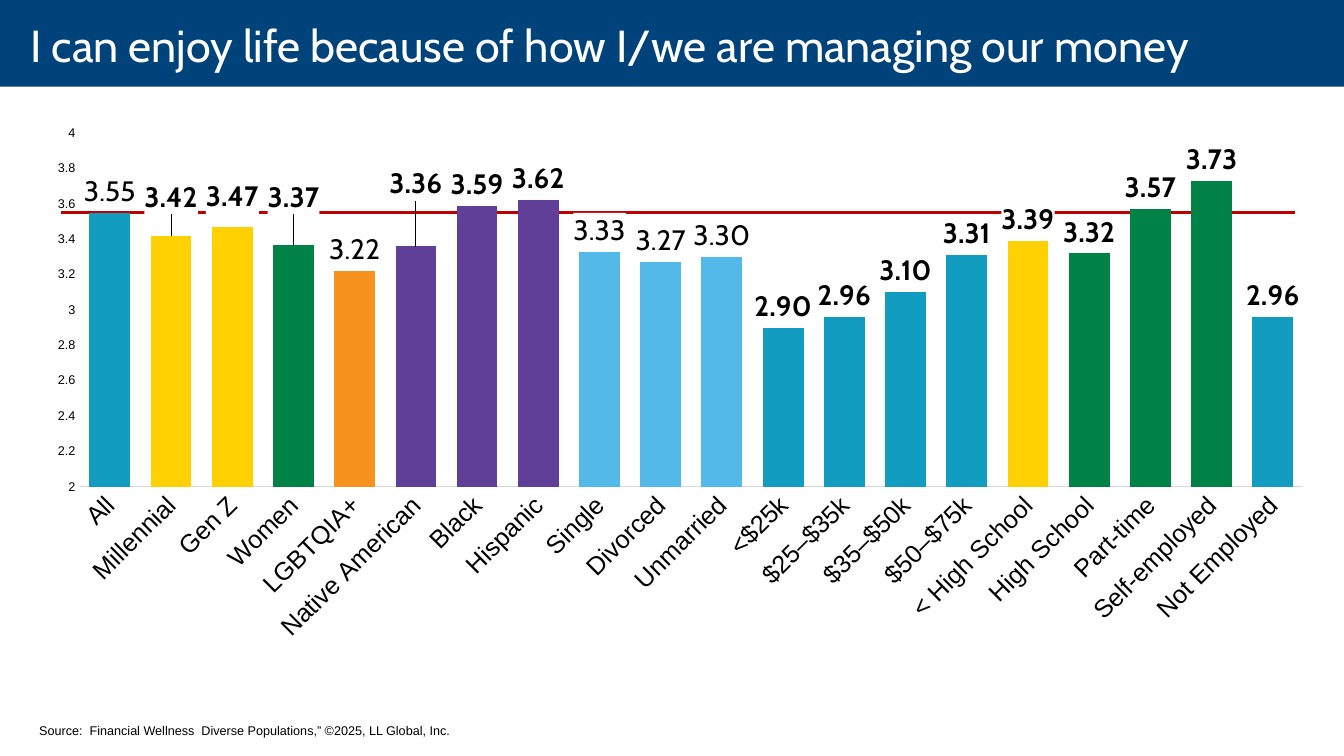
from lxml import etree
from pptx import Presentation
from pptx import util as u
from pptx.chart import data as chart_data
from pptx.dml.color import RGBColor
from pptx.enum import chart as chart_enum
from pptx.enum import shapes, text
from pptx.oxml import parse_xml
from pptx.oxml.ns import nsdecls, qn

NAVY = RGBColor(0x00, 0x43, 0x7B)
WHITE = RGBColor(0xFF, 0xFF, 0xFF)
BLACK = RGBColor(0x00, 0x00, 0x00)
RED = RGBColor(0xC0, 0x00, 0x00)
GRAY = RGBColor(0xD9, 0xD9, 0xD9)
TEAL = RGBColor(0x12, 0x9D, 0xC0)
YELLOW = RGBColor(0xFF, 0xD1, 0x03)
GREEN = RGBColor(0x00, 0x81, 0x45)
ORANGE = RGBColor(0xF7, 0x92, 0x1E)
PURPLE = RGBColor(0x60, 0x3F, 0x99)
SKY = RGBColor(0x52, 0xB9, 0xE9)

GROUPS = [
    ("All", 3.55, TEAL),
    ("Millennial", 3.42, YELLOW),
    ("Gen Z", 3.47, YELLOW),
    ("Women", 3.37, GREEN),
    ("LGBTQIA+", 3.22, ORANGE),
    ("Native American", 3.36, PURPLE),
    ("Black", 3.59, PURPLE),
    ("Hispanic", 3.62, PURPLE),
    ("Single", 3.33, SKY),
    ("Divorced", 3.27, SKY),
    ("Unmarried", 3.3, SKY),
    ("<$25k", 2.9, TEAL),
    ("$25–$35k", 2.96, TEAL),
    ("$35–$50k", 3.1, TEAL),
    ("$50–$75k", 3.31, TEAL),
    ("< High School", 3.39, YELLOW),
    ("High School", 3.32, GREEN),
    ("Part-time", 3.57, GREEN),
    ("Self-employed", 3.73, GREEN),
    ("Not Employed", 2.96, TEAL),
]
REGULAR_LABELS = {"All", "LGBTQIA+", "Single", "Divorced", "Unmarried"}
WHITE_BACKED_LABELS = {"Millennial", "Gen Z", "Women", "Single", "< High School"}
LABEL_RISES = {"Millennial": 0.17, "Gen Z": 0.09, "Women": 0.26, "Native American": 0.41}


def style_font(font, size, name="Arial", color=BLACK, bold=False):
    font.size = u.Pt(size)
    font.name = name
    font.bold = bold
    font.color.rgb = color


def add_text(slide, box, content, insets=(0.1, 0.05, 0.1, 0.05),
             anchor=text.MSO_ANCHOR.TOP, **font_format):
    frame = slide.shapes.add_textbox(*map(u.Inches, box)).text_frame
    frame.word_wrap = True
    frame.vertical_anchor = anchor
    (frame.margin_left, frame.margin_top,
     frame.margin_right, frame.margin_bottom) = map(u.Inches, insets)
    run = frame.paragraphs[0].add_run()
    run.text = content
    style_font(run.font, **font_format)


def add_header(slide, box):
    left, top, width, height = box
    band = slide.shapes.add_shape(shapes.MSO_SHAPE.RECTANGLE, *map(u.Inches, box))
    band.shadow.inherit = False
    band.fill.solid()
    band.fill.fore_color.rgb = NAVY
    band.line.fill.background()
    add_text(slide, (left, top - 0.04, width, height + 0.11),
             "I can enjoy life because of how I/we are managing our money",
             insets=(0.3, 0, 0.2, 0), anchor=text.MSO_ANCHOR.MIDDLE,
             size=32, name="Cabin", color=WHITE)


def add_average_line(slide, left, right, top):
    line = slide.shapes.add_connector(
        shapes.MSO_CONNECTOR.STRAIGHT, *map(u.Inches, (left, top, right, top)))
    line.line.color.rgb = RED
    line.line.width = u.Pt(2.25)
    etree.SubElement(line._element.spPr, qn("a:effectLst"))


def set_plot_layout(chart, x, y, width, height):
    plot_area = chart._chartSpace.chart.plotArea
    for layout in plot_area.findall(qn("c:layout")):
        plot_area.remove(layout)
    plot_area.insert(0, parse_xml(
        f'<c:layout {nsdecls("c")}><c:manualLayout>'
        '<c:layoutTarget val="inner"/><c:xMode val="edge"/><c:yMode val="edge"/>'
        f'<c:x val="{x}"/><c:y val="{y}"/><c:w val="{width}"/><c:h val="{height}"/>'
        '</c:manualLayout></c:layout>'))


def format_axes(chart):
    categories, values = chart.category_axis, chart.value_axis
    for axis, size in ((categories, 18), (values, 9)):
        axis.has_major_gridlines = False
        axis.major_tick_mark = chart_enum.XL_TICK_MARK.NONE
        axis.minor_tick_mark = chart_enum.XL_TICK_MARK.NONE
        style_font(axis.tick_labels.font, size)
    categories.format.line.color.rgb = GRAY
    categories.format.line.width = u.Pt(0.75)
    rotation = categories._element.find(qn("c:txPr")).find(qn("a:bodyPr"))
    rotation.set("rot", "-2700000")
    rotation.set("vert", "horz")
    values.minimum_scale, values.maximum_scale, values.major_unit = 2, 4, 0.2
    values.tick_labels.number_format = "General"
    values.tick_labels.number_format_is_linked = False
    values.format.line.fill.background()


def format_label(series, index, name, chart_height):
    label = series.points[index].data_label
    style_font(label.font, 20, "Cabin", bold=name not in REGULAR_LABELS)
    label.position = chart_enum.XL_LABEL_POSITION.OUTSIDE_END
    element = series._element.xpath(f'c:dLbls/c:dLbl[c:idx/@val="{index}"]')[0]
    parts = []
    if name in LABEL_RISES:
        rise = round(LABEL_RISES[name] / chart_height, 4)
        parts.append(f'<c:layout {nsdecls("c")}><c:manualLayout><c:x val="0"/>'
                     f'<c:y val="{-rise}"/></c:manualLayout></c:layout>')
    parts.append(f'<c:numFmt {nsdecls("c")} formatCode="0.00" sourceLinked="0"/>')
    if name in WHITE_BACKED_LABELS:
        for properties in element.findall(qn("c:spPr")):
            element.remove(properties)
        parts.append(f'<c:spPr {nsdecls("c", "a")}><a:solidFill>'
                     f'<a:srgbClr val="{WHITE}"/></a:solidFill></c:spPr>')
    for position, part in enumerate(parts, start=1):
        element.insert(position, parse_xml(part))


def add_score_chart(slide, box):
    scores = chart_data.CategoryChartData(number_format="0.00")
    scores.categories = [name for name, _, _ in GROUPS]
    scores.add_series("Series 1", [score for _, score, _ in GROUPS])
    chart = slide.shapes.add_chart(
        chart_enum.XL_CHART_TYPE.COLUMN_CLUSTERED, *map(u.Inches, box), scores).chart
    chart.has_legend = False
    chart.has_title = False
    style_font(chart.font, 10)
    set_plot_layout(chart, 0.025, 0.026, 0.959, 0.65)
    format_axes(chart)

    plot = chart.plots[0]
    plot.gap_width, plot.overlap = 50, -27
    plot.vary_by_categories = False
    series = plot.series[0]
    series.invert_if_negative = False
    series.format.fill.solid()
    series.format.fill.fore_color.rgb = TEAL
    labels = series.data_labels
    labels.show_value = True
    labels.number_format = "0.00"
    labels.number_format_is_linked = False
    labels.position = chart_enum.XL_LABEL_POSITION.OUTSIDE_END
    style_font(labels.font, 20, "Cabin", bold=True)

    special_labels = REGULAR_LABELS | WHITE_BACKED_LABELS | set(LABEL_RISES)
    for index, (name, _, color) in enumerate(GROUPS):
        if color != TEAL:
            fill = series.points[index].format.fill
            fill.solid()
            fill.fore_color.rgb = color
        if name in special_labels:
            format_label(series, index, name, box[3])


def main():
    presentation = Presentation()
    presentation.slide_width = u.Inches(13.33)
    presentation.slide_height = u.Inches(7.5)
    slide = presentation.slides.add_slide(presentation.slide_layouts[6])
    add_header(slide, (0, 0, 13.33, 0.86))
    add_average_line(slide, 0.61, 12.84, 2.11)
    add_score_chart(slide, (0.47, 1.18, 12.66, 5.4))
    add_text(slide, (0.29, 7.12, 5.19, 0.25),
             "Source:  Financial Wellness  Diverse Populations,” ©2025, LL Global, Inc.",
             size=9)
    presentation.save("out.pptx")


if __name__ == "__main__":
    main()
